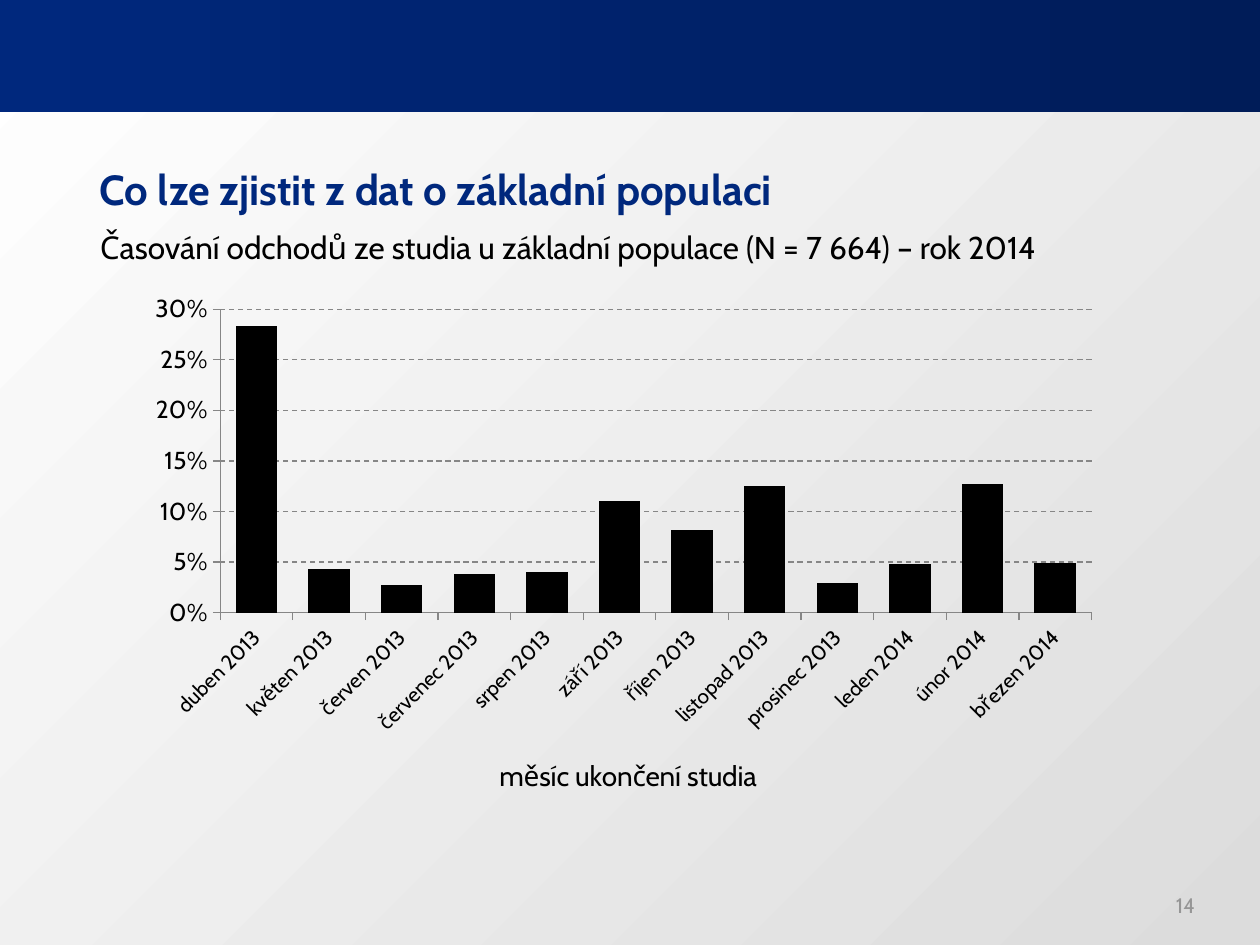
import dataclasses

import lxml.etree
import pptx
import pptx.chart.data
import pptx.dml.color
import pptx.enum.chart
import pptx.enum.dml
import pptx.enum.shapes
import pptx.enum.text
import pptx.oxml
import pptx.oxml.ns
import pptx.util

Pt = pptx.util.Pt
PARAGRAPH_ALIGN = pptx.enum.text.PP_ALIGN
ANCHOR = pptx.enum.text.MSO_ANCHOR
TICK_MARK = pptx.enum.chart.XL_TICK_MARK


@dataclasses.dataclass(frozen=True)
class Theme:
    font: str = "Cabin"
    navy: str = "00287D"
    navy_dark: str = "001C58"
    white: str = "FFFFFF"
    grey_light: str = "DCDCDC"
    grey_axis: str = "868686"
    grey_number: str = "969696"
    black: str = "000000"
    title_size: int = 24
    subtitle_size: int = 18
    axis_title_size: int = 16
    value_size: int = 14
    category_size: int = 12
    number_size: int = 12


THEME = Theme()

DEPARTURES = {
    "duben 2013": 0.283,
    "květen 2013": 0.043,
    "červen 2013": 0.027,
    "červenec 2013": 0.038,
    "srpen 2013": 0.04,
    "září 2013": 0.11,
    "říjen 2013": 0.082,
    "listopad 2013": 0.125,
    "prosinec 2013": 0.029,
    "leden 2014": 0.048,
    "únor 2014": 0.127,
    "březen 2014": 0.049,
}


def rgb(color):
    return pptx.dml.color.RGBColor.from_string(color)


def style_font(font, size, color, bold=False):
    font.name = THEME.font
    font.size = Pt(size)
    font.bold = bold
    font.color.rgb = rgb(color)


def fill_gradient(fill, colors, angle):
    fill.gradient()
    fill.gradient_angle = angle
    for stop, color in zip(fill.gradient_stops, colors):
        stop.color.rgb = rgb(color)


def place(shape, box):
    shape.left, shape.top, shape.width, shape.height = map(Pt, box)


def write_text(shape, text, size, color, bold=False, align=PARAGRAPH_ALIGN.LEFT,
               anchor=ANCHOR.TOP, margins=(0, 0)):
    frame = shape.text_frame
    frame.word_wrap = True
    frame.auto_size = pptx.enum.text.MSO_AUTO_SIZE.NONE
    frame.vertical_anchor = anchor
    frame.margin_left = frame.margin_right = Pt(margins[0])
    frame.margin_top = frame.margin_bottom = Pt(margins[1])
    paragraph = frame.paragraphs[0]
    paragraph.alignment = align
    run = paragraph.add_run()
    run.text = text
    style_font(run.font, size, color, bold)


def add_header_band(slide, box):
    band = slide.shapes.add_shape(
        pptx.enum.shapes.MSO_SHAPE.RECTANGLE, *map(Pt, box))
    band.shadow.inherit = False
    band.line.fill.background()
    fill_gradient(band.fill, (THEME.navy, THEME.navy_dark), 0)


def add_heading(slide, box):
    left, top, width, height = box
    title_height = 42.5
    subtitle_top = 47
    title = slide.shapes.title
    place(title, (left, top, width, title_height))
    write_text(title, "Co lze zjistit z dat o základní populaci",
               THEME.title_size, THEME.navy, bold=True,
               anchor=ANCHOR.BOTTOM, margins=(0, 3.6))
    subtitle = slide.shapes.add_textbox(
        Pt(left), Pt(top + subtitle_top), Pt(width), Pt(height - subtitle_top))
    write_text(subtitle,
               "Časování odchodů ze studia u základní populace (N = 7 664) – rok 2014",
               THEME.subtitle_size, THEME.black)


def add_slide_number(slide, box, number):
    shape = slide.shapes.add_textbox(*map(Pt, box))
    write_text(shape, str(number), THEME.number_size, THEME.grey_number,
               align=PARAGRAPH_ALIGN.RIGHT, anchor=ANCHOR.BOTTOM,
               margins=(7.2, 3.6))


def manual_layout(target=None, **fractions):
    namespace = pptx.oxml.ns.nsdecls("c")
    inner = f'<c:layoutTarget val="{target}"/>' if target else ""
    modes = "".join(f'<c:{name}Mode val="edge"/>' for name in "xy")
    values = "".join(f'<c:{name} val="{value}"/>' for name, value in fractions.items())
    return pptx.oxml.parse_xml(
        f"<c:layout {namespace}><c:manualLayout>{inner}{modes}{values}"
        "</c:manualLayout></c:layout>")


def style_axis(axis, label_size):
    axis.major_tick_mark = TICK_MARK.OUTSIDE
    axis.minor_tick_mark = TICK_MARK.NONE
    axis.format.line.color.rgb = rgb(THEME.grey_axis)
    axis.format.line.width = Pt(0.75)
    style_font(axis.tick_labels.font, label_size, THEME.black)


def style_category_axis(axis):
    style_axis(axis, THEME.category_size)
    qn = pptx.oxml.ns.qn
    body = axis._element.find(qn("c:txPr")).find(qn("a:bodyPr"))
    body.set("rot", "-2700000")
    body.set("vert", "horz")
    title = axis.axis_title
    run = title.text_frame.paragraphs[0].add_run()
    run.text = "měsíc ukončení studia"
    style_font(run.font, THEME.axis_title_size, THEME.black)
    for layout in title._element.findall(qn("c:layout")):
        title._element.remove(layout)
    title._element.find(qn("c:tx")).addnext(manual_layout(x=0.37, y=0.88))


def style_value_axis(axis):
    style_axis(axis, THEME.value_size)
    axis.minimum_scale = 0
    axis.maximum_scale = 0.3
    axis.major_unit = 0.05
    axis.tick_labels.number_format = "0%"
    axis.tick_labels.number_format_is_linked = False
    axis.has_major_gridlines = True
    gridline = axis.major_gridlines.format.line
    gridline.color.rgb = rgb(THEME.grey_axis)
    gridline.width = Pt(0.75)
    gridline.dash_style = pptx.enum.dml.MSO_LINE.DASH


def add_departure_chart(slide, box):
    data = pptx.chart.data.CategoryChartData(number_format="0.0%")
    data.categories = list(DEPARTURES)
    data.add_series("Series 1", list(DEPARTURES.values()))
    chart = slide.shapes.add_chart(
        pptx.enum.chart.XL_CHART_TYPE.COLUMN_CLUSTERED, *map(Pt, box), data).chart
    chart.has_legend = False
    chart.has_title = False
    style_font(chart.font, THEME.category_size, THEME.black)
    plot = chart.plots[0]
    plot.gap_width = 75
    plot.vary_by_categories = False
    columns = plot.series[0].format.fill
    columns.solid()
    columns.fore_color.rgb = rgb(THEME.black)
    style_category_axis(chart.category_axis)
    style_value_axis(chart.value_axis)
    plot_area = chart._chartSpace.chart.plotArea
    for layout in plot_area.findall(pptx.oxml.ns.qn("c:layout")):
        plot_area.remove(layout)
    plot_area.insert(0, manual_layout("inner", x=0.09, y=0.05, w=0.89, h=0.57))


def main():
    presentation = pptx.Presentation()
    presentation.slide_width = Pt(720)
    presentation.slide_height = Pt(540)
    slide = presentation.slides.add_slide(
        presentation.slide_layouts.get_by_name("Title Only"))
    fill_gradient(slide.background.fill, (THEME.white, THEME.grey_light), 315)
    add_header_band(slide, (0, 0, 720, 64))
    add_heading(slide, (57, 83.5, 650, 80))
    add_departure_chart(slide, (75.5, 161.5, 559.5, 304.5))
    add_slide_number(slide, (540, 492, 150, 36), 14)
    presentation.save("out.pptx")


if __name__ == "__main__":
    main()
